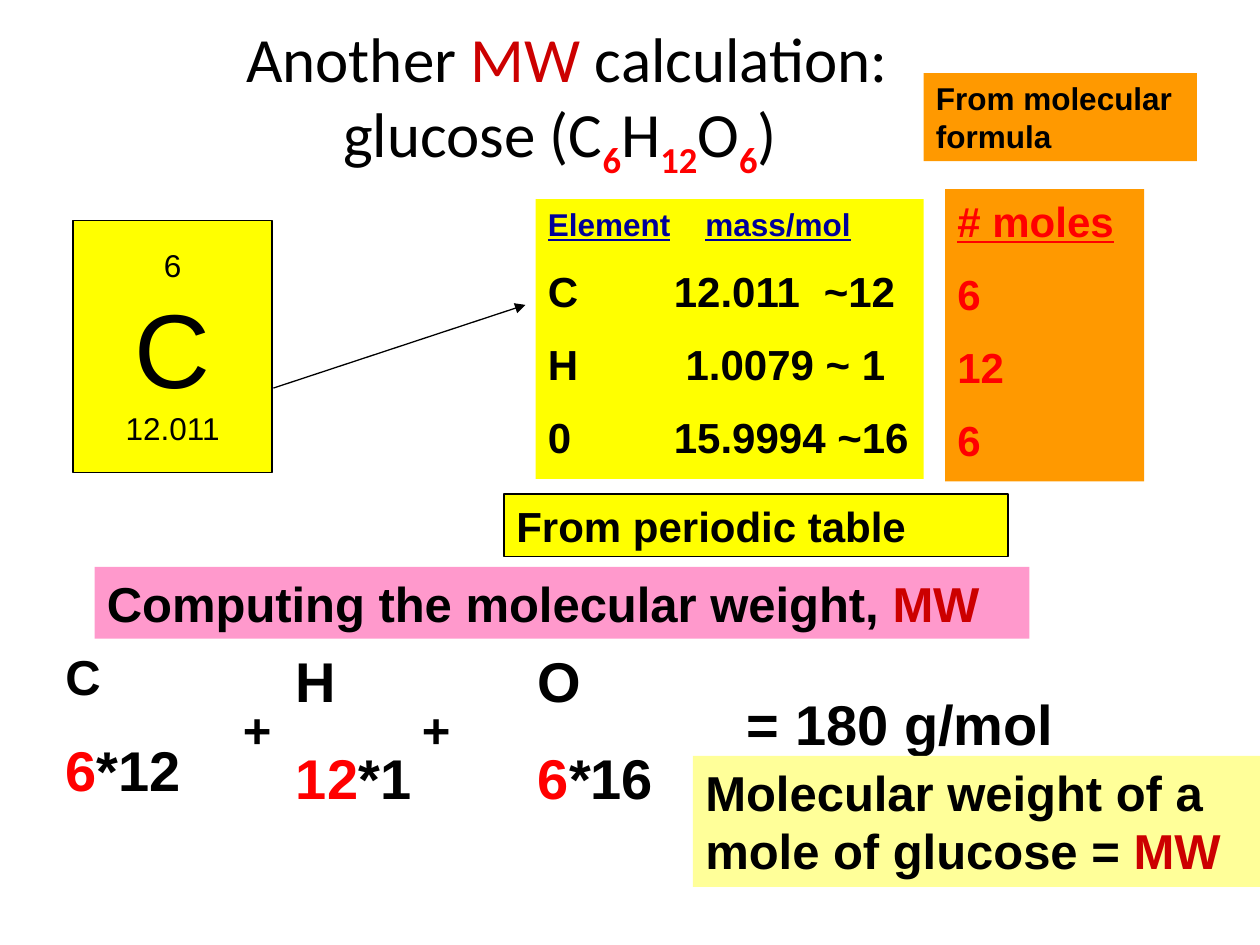
import pptx
import pptx.util
import pptx.dml.color
import pptx.enum.shapes
import pptx.enum.text
import pptx.oxml
import pptx.oxml.ns
import lxml.etree

Inches = pptx.util.Inches
Pt = pptx.util.Pt
ALIGN = pptx.enum.text.PP_ALIGN
ANCHOR = pptx.enum.text.MSO_ANCHOR

BLACK, RED, CRIMSON, NAVY = "000000", "FF0000", "CC0000", "000099"
YELLOW, ORANGE, PINK, CREAM = "FFFF00", "FF9900", "FF99CC", "FFFF99"


def rgb(value):
    return pptx.dml.color.RGBColor.from_string(value)


def append_xml(parent, tag, **attributes):
    child = lxml.etree.SubElement(parent, pptx.oxml.ns.qn(tag))
    for key, value in attributes.items():
        child.set(key, value)
    return child


class SlideBuilder:
    body_font = "Arial"
    title_font = "Calibri"
    line_width = Pt(0.75)

    def __init__(self, slide):
        self.slide = slide

    def add_runs(self, paragraph, parts, size, color=BLACK, bold=True,
                 underline=False, font=None, tabs=()):
        if tabs:
            stops = append_xml(paragraph._p.get_or_add_pPr(), "a:tabLst")
            for stop in tabs:
                append_xml(stops, "a:tab", pos=str(Inches(stop)), algn="l")
        style = paragraph.font
        style.name = font or self.body_font
        style.size = Pt(size)
        style.bold = bold
        style.underline = underline
        style.color.rgb = rgb(color)
        for part in [parts] if isinstance(parts, str) else parts:
            text, accent = part if isinstance(part, tuple) else (part, None)
            run = paragraph.add_run()
            run.text = text
            if accent:
                run.font.color.rgb = rgb(accent)

    def fill_frame(self, frame, rows, align=ALIGN.LEFT, spaced=True):
        for index, row in enumerate(rows):
            paragraph = frame.add_paragraph() if index else frame.paragraphs[0]
            paragraph.alignment = align
            if index and spaced:
                paragraph.space_before = Pt(row["size"] * 0.54)
            self.add_runs(paragraph, **row)

    def title(self, box, lines, size):
        holder = self.slide.shapes.title
        holder.left, holder.top, holder.width, holder.height = map(Inches, box)
        frame = holder.text_frame
        frame.vertical_anchor = ANCHOR.MIDDLE
        paragraph = frame.paragraphs[0]
        paragraph.alignment = ALIGN.CENTER
        for index, parts in enumerate(lines):
            if index:
                paragraph.add_line_break()
            self.add_runs(paragraph, parts, size, bold=False,
                          font=self.title_font)
        for run in paragraph.runs:
            if run.text.isdigit():
                run.font.bold = True
                run._r.get_or_add_rPr().set("baseline", "-25000")

    def text(self, box, rows, top_inset=0.05):
        frame = self.slide.shapes.add_textbox(*map(Inches, box)).text_frame
        frame.word_wrap = True
        frame.margin_top = Inches(top_inset)
        self.fill_frame(frame, rows)

    def panel(self, box, fill, rows, outlined=False, centered=False):
        panel = self.slide.shapes.add_shape(
            pptx.enum.shapes.MSO_SHAPE.RECTANGLE, *map(Inches, box))
        panel.shadow.inherit = False
        panel.fill.solid()
        panel.fill.fore_color.rgb = rgb(fill)
        if outlined:
            panel.line.color.rgb = rgb(BLACK)
            panel.line.width = self.line_width
        else:
            panel.line.fill.background()
        frame = panel.text_frame
        frame.word_wrap = not centered
        frame.vertical_anchor = ANCHOR.MIDDLE if centered else ANCHOR.TOP
        self.fill_frame(frame, rows, ALIGN.CENTER if centered else ALIGN.LEFT,
                        spaced=not centered)

    def arrow(self, start, end):
        arrow = self.slide.shapes.add_connector(
            pptx.enum.shapes.MSO_CONNECTOR.STRAIGHT,
            *map(Inches, start + end))
        arrow.line.color.rgb = rgb(BLACK)
        arrow.line.width = self.line_width
        append_xml(arrow.line._get_or_add_ln(), "a:tailEnd", type="triangle")
        append_xml(arrow._element.spPr, "a:effectLst")


def main():
    deck = pptx.Presentation()
    deck.slide_width, deck.slide_height = Inches(10), Inches(7.5)
    page = SlideBuilder(deck.slides.add_slide(deck.slide_layouts[5]))

    page.title((0.25, 0.17, 8.5, 1.25), [
        ["Another ", ("MW", CRIMSON), " calculation:"],
        ["glucose (C", ("6", RED), "H", ("12", RED), "O", ("6", RED), ") "],
    ], 36)

    masses = ["C\t12.011\t~12", "H\t 1.0079 ~ 1", "0\t15.9994 ~16"]
    page.panel((4.25, 1.58, 3.08, 2.22), YELLOW, [
        dict(parts="Element\tmass/mol", size=18, color=NAVY, underline=True,
             tabs=[1.25]),
        *[dict(parts=mass, size=24, tabs=[1, 2.19]) for mass in masses],
    ])
    page.panel((4, 3.92, 4, 0.5), YELLOW,
               [dict(parts="From periodic table", size=24)], outlined=True)
    page.panel((0.58, 1.75, 1.58, 2), YELLOW, [
        dict(parts=label, size=size, bold=False)
        for label, size in [("6", 18), ("C", 60), ("12.011", 18)]
    ], outlined=True, centered=True)
    page.arrow((2.17, 3.08), (4.17, 2.42))

    terms = [
        ("C", 28, "6", "*12", (0.42, 4.58, 1.25, 1.92), 0.55),
        ("H", 32, "12", "*1", (2.25, 5.08, 1.25, 1.45), 0.05),
        ("O", 32, "6", "*16", (4.17, 5.08, 1.25, 1.45), 0.05),
    ]
    for element, size, moles, mass, box, top_inset in terms:
        page.text(box, [dict(parts=element, size=size),
                        dict(parts=[(moles, RED), mass], size=32)], top_inset)

    page.panel((7.5, 1.5, 1.58, 2.32), ORANGE, [
        dict(parts=count, size=24, color=RED, underline=count == "# moles")
        for count in ["# moles", "6", "12", "6"]
    ])
    page.panel((7.33, 0.58, 2.17, 0.7), ORANGE,
               [dict(parts="From molecular formula", size=18)])
    for plus_left in (3.25, 1.83):
        page.text((plus_left, 5.5, 0.33, 0.57), [dict(parts="+", size=28)])
    page.text((5.83, 5.42, 2.83, 0.64), [dict(parts="= 180 g/mol", size=32)])

    conclusions = [
        ((5.5, 6, 4.5, 1.04), CREAM, "Molecular weight of a mole of glucose = "),
        ((0.75, 4.5, 7.42, 0.57), PINK, "Computing the molecular weight, "),
    ]
    for box, fill, statement in conclusions:
        page.panel(box, fill,
                   [dict(parts=[statement, ("MW", CRIMSON)], size=28)])

    deck.save("out.pptx")


if __name__ == "__main__":
    main()
